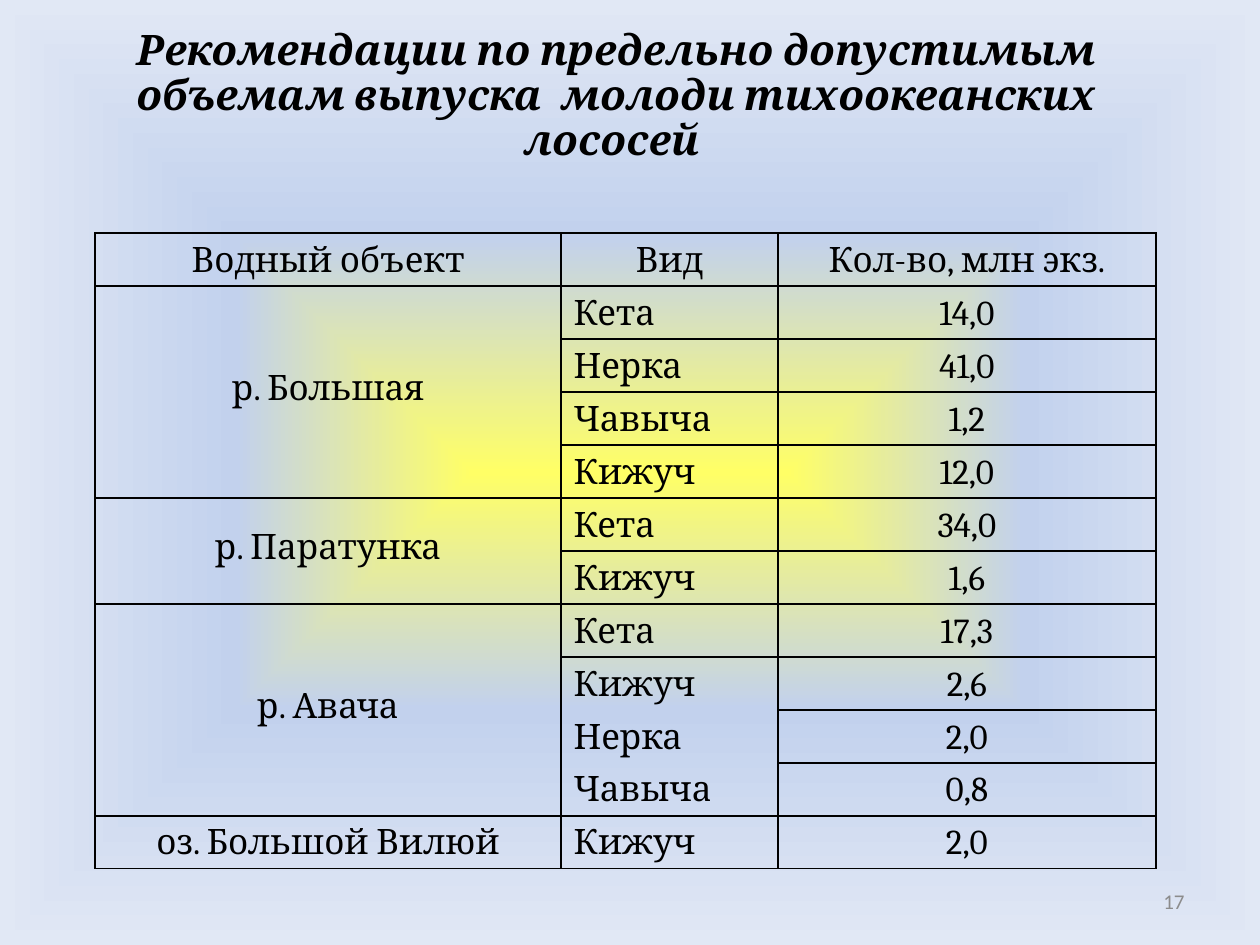
from lxml import etree
from pptx import Presentation
from pptx import util as u
from pptx.dml.color import RGBColor
from pptx.enum import text
from pptx.oxml.ns import qn

SCALE = 914400 // 126
ALIGN, ANCHOR = text.PP_ALIGN, text.MSO_ANCHOR

HEADER = ["Водный объект", "Вид", "Кол-во, млн экз."]
WATERS = [
    ("р. Большая", [("Кета", "14,0"), ("Нерка", "41,0"), ("Чавыча", "1,2"), ("Кижуч", "12,0")]),
    ("р. Паратунка", [("Кета", "34,0"), ("Кижуч", "1,6")]),
    ("р. Авача", [("Кета", "17,3"), ("Кижуч", "2,6"), ("Нерка", "2,0"), ("Чавыча", "0,8")]),
    ("оз. Большой Вилюй", [("Кижуч", "2,0")]),
]
OPEN_EDGES = {(8, "B"), (9, "T"), (9, "B"), (10, "T")}


def px(n):
    return u.Emu(n * SCALE)


def color(value):
    return RGBColor.from_string(value)


class Deck:
    font = "Cambria"
    ink = "000000"

    def __init__(self, width, height):
        self.prs = Presentation()
        self.prs.slide_width, self.prs.slide_height = px(width), px(height)
        self.s = self.prs.slides.add_slide(self.prs.slide_layouts[5])

    def background(self, stops):
        self.s.background.fill.gradient()
        grad = self.s._element.find(".//" + qn("a:gradFill"))
        for child in list(grad):
            grad.remove(child)
        gs_lst = etree.SubElement(grad, qn("a:gsLst"))
        for pos, value in stops:
            gs = etree.SubElement(gs_lst, qn("a:gs"), pos=str(pos * 1000))
            etree.SubElement(gs, qn("a:srgbClr"), val=value)
        shade = etree.SubElement(grad, qn("a:path"), path="shape")
        etree.SubElement(shade, qn("a:fillToRect"), l="50000", t="50000", r="50000", b="50000")

    def put_text(self, tf, value, size, align, font=None, ink=None, bold=False, italic=False):
        tf.text = value
        p = tf.paragraphs[0]
        p.alignment = align
        for r in p.runs:
            r.font.name = font or self.font
            r.font.size = u.Pt(size)
            r.font.bold, r.font.italic = bold, italic
            r.font.color.rgb = color(ink or self.ink)
        return p

    def place(self, sp, box):
        sp.left, sp.top, sp.width, sp.height = map(px, box)
        tf = sp.text_frame
        tf.word_wrap = True
        tf.auto_size = text.MSO_AUTO_SIZE.NONE
        tf.vertical_anchor = ANCHOR.MIDDLE
        return tf

    def title(self, value, box):
        tf = self.place(self.s.shapes.title, box)
        p = self.put_text(tf, value, 24, ALIGN.CENTER, bold=True, italic=True)
        p.line_spacing = 0.9

    def number(self, value, box):
        sp = self.s.shapes.add_textbox(*map(px, box))
        self.put_text(self.place(sp, box), value, 12, ALIGN.RIGHT, font="Calibri", ink="8C8C8C")

    def border(self, side, visible):
        ln = etree.Element(qn("a:ln" + side), w=str(u.Pt(1)))
        if visible:
            fill = etree.SubElement(ln, qn("a:solidFill"))
            etree.SubElement(fill, qn("a:srgbClr"), val=self.ink)
        else:
            etree.SubElement(ln, qn("a:noFill"))
        return ln

    def cell(self, cell, open_sides):
        cell.margin_top, cell.margin_bottom = 0, px(5)
        cell.vertical_anchor = ANCHOR.BOTTOM
        cell.fill.background()
        props = cell._tc.get_or_add_tcPr()
        for i, side in enumerate("LRTB"):
            props.insert(i, self.border(side, side not in open_sides))

    def table(self, left, top, widths, row_height, header, groups):
        count = 1 + sum(len(rows) for _, rows in groups)
        frame = self.s.shapes.add_table(
            count, len(widths), px(left), px(top), px(sum(widths)), px(row_height * count))
        tbl = frame.table
        tbl.first_row = tbl.horz_banding = False
        for col, width in zip(tbl.columns, widths):
            col.width = px(width)
        for i in range(count):
            for j in range(len(widths)):
                open_sides = [side for row, side in OPEN_EDGES if (row, 1) == (i, j)]
                self.cell(tbl.cell(i, j), open_sides)
        for j, value in enumerate(header):
            self.put_text(tbl.cell(0, j).text_frame, value, 20, ALIGN.CENTER)
        row = 1
        for water, fish in groups:
            first = tbl.cell(row, 0)
            if len(fish) > 1:
                first.merge(tbl.cell(row + len(fish) - 1, 0))
                first.vertical_anchor = ANCHOR.MIDDLE
            self.put_text(first.text_frame, water, 20, ALIGN.CENTER)
            for species, amount in fish:
                self.put_text(tbl.cell(row, 1).text_frame, species, 20, ALIGN.LEFT)
                self.put_text(tbl.cell(row, 2).text_frame, amount, 20, ALIGN.CENTER)
                row += 1


def main():
    deck = Deck(1260, 945)
    deck.background([(0, "FFFF66"), (50, "C2D1ED"), (100, "E1E8F5")])
    deck.number("17", (903, 876, 294, 50))
    deck.title("Рекомендации по предельно допустимым объемам выпуска  "
               "молоди тихоокеанских лососей ", (49, 39, 1134, 116))
    deck.table(95, 233, [466, 217, 378], 53, HEADER, WATERS)
    deck.prs.save("out.pptx")


if __name__ == "__main__":
    main()
